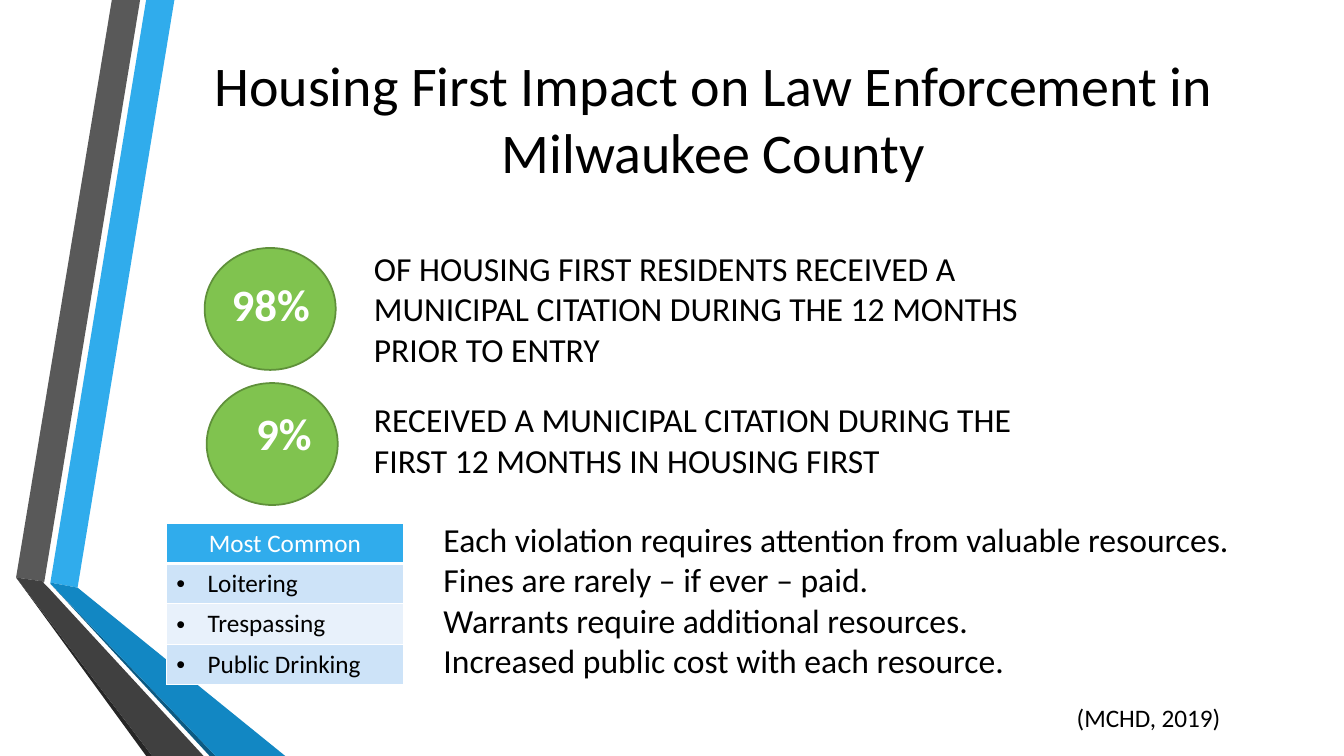
from pptx import Presentation
from pptx.dml.color import RGBColor
from pptx.enum.shapes import MSO_SHAPE as Shape
from pptx.enum.text import MSO_ANCHOR as Anchor, PP_ALIGN as Align
from pptx.oxml.ns import qn
from pptx.util import Inches, Pt
from lxml.etree import SubElement, Element

COLORS = {
    "sky": "30ACEC", "blue": "1287C3", "navy": "0C5A82",
    "gray": "595959", "dark": "404040", "coal": "262626",
    "green": "80C34F", "moss": "5F903A",
    "band": "CDE3F8", "pale": "E8F1FB",
    "white": "FFFFFF", "black": "000000",
}

RIBBONS = [
    ("sky", [(0.5, 5.78), (0.77, 5.83), (1.73, 0), (1.45, 0)]),
    ("gray", [(1.39, 0), (1.11, 0), (0.16, 5.73), (0.44, 5.77)]),
    ("coal", [(0.16, 5.73), (1.45, 7.5), (1.51, 7.5)]),
    ("navy", [(0.5, 5.79), (2.08, 7.5), (2.14, 7.5)]),
    ("blue", [(0.5, 5.79), (2.14, 7.5), (2.83, 7.5), (0.77, 5.83), (0.5, 5.78)]),
    ("dark", [(2.02, 7.5), (0.48, 5.83), (0.43, 5.78), (0.44, 5.77),
              (0.16, 5.73), (1.51, 7.5)]),
]

OFFENSES = ["Loitering", "Trespassing", "Public Drinking"]

COSTS = [
    "Each violation requires attention from valuable resources.",
    "Fines are rarely – if ever – paid.",
    "Warrants require additional resources.",
    "Increased public cost with each resource.",
]


def color(name):
    return RGBColor.from_string(COLORS[name])


def paint(shape, fill, line=None):
    shape.shadow.inherit = False
    shape.fill.solid()
    shape.fill.fore_color.rgb = color(fill)
    if line:
        shape.line.color.rgb = color(line)
        shape.line.width = Pt(1.25)
    else:
        shape.line.fill.background()


def add_ribbon(slide, fill, points):
    start, *rest = [(Inches(x), Inches(y)) for x, y in points]
    outline = slide.shapes.build_freeform(*start)
    outline.add_line_segments(rest, close=True)
    paint(outline.convert_to_shape(), fill)


def write(para, text, size, ink="black", bold=False, align=Align.LEFT):
    para.alignment = align
    run = para.add_run()
    run.text = text
    font = run.font
    font.name, font.size, font.bold = "Calibri", Pt(size), bold
    font.color.rgb = color(ink)


def fill_frame(shape, lines, size, anchor=Anchor.TOP, **style):
    frame = shape.text_frame
    frame.word_wrap = True
    frame.vertical_anchor = anchor
    for i, line in enumerate(lines):
        para = frame.add_paragraph() if i else frame.paragraphs[0]
        write(para, line, size, **style)


def add_text(slide, box, text, size, **style):
    shape = slide.shapes.add_textbox(*map(Inches, box))
    fill_frame(shape, [text], size, **style)


def add_disc(slide, left, top):
    disc = slide.shapes.add_shape(
        Shape.OVAL, Inches(left), Inches(top), Inches(1.3), Inches(1.21))
    paint(disc, "green", "moss")


def add_panel(slide, box, lines):
    """Add a see-through white box of text lines."""
    panel = slide.shapes.add_shape(Shape.RECTANGLE, *map(Inches, box))
    paint(panel, "white")
    tint = panel.fill._xPr.find(qn("a:solidFill"))[0]
    SubElement(tint, qn("a:alpha"), val="46000")
    fill_frame(panel, lines, 24)


def set_cell(cell, fill, under=1):
    cell.fill.solid()
    cell.fill.fore_color.rgb = color(fill)
    cell.vertical_anchor = Anchor.TOP
    props = cell._tc.get_or_add_tcPr()
    for i, side in enumerate("LRTB"):
        width = Pt(under if side == "B" else 1)
        line = Element(qn("a:ln" + side), w=str(width))
        solid = SubElement(line, qn("a:solidFill"))
        SubElement(solid, qn("a:srgbClr"), val=COLORS["white"])
        props.insert(i, line)


def add_bullet(para):
    props = para._p.get_or_add_pPr()
    indent = Inches(0.31)
    props.set("marL", str(indent))
    props.set("indent", str(-indent))
    SubElement(props, qn("a:buFont"), typeface="Arial")
    SubElement(props, qn("a:buChar"), char="•")


def add_list(slide, box, head, items):
    """Add a one-column table with a header and bulleted rows."""
    table = slide.shapes.add_table(
        len(items) + 1, 1, *map(Inches, box)).table
    top = table.cell(0, 0)
    set_cell(top, "sky", under=3)
    write(top.text_frame.paragraphs[0], head, 18, "white", align=Align.CENTER)
    for i, item in enumerate(items, 1):
        cell = table.cell(i, 0)
        set_cell(cell, "band" if i % 2 else "pale")
        para = cell.text_frame.paragraphs[0]
        write(para, item, 18)
        add_bullet(para)


def main():
    deck = Presentation()
    deck.slide_width, deck.slide_height = Inches(13.33), Inches(7.5)
    slide = deck.slides.add_slide(deck.slide_layouts[6])

    for fill, points in RIBBONS:
        add_ribbon(slide, fill, points)

    add_text(slide, (1.01, 0.01, 12.13, 2.31),
             "Housing First Impact on Law Enforcement in Milwaukee County",
             40, anchor=Anchor.MIDDLE, align=Align.CENTER)

    add_disc(slide, 2.03, 2.46)
    add_text(slide, (2.2, 2.7, 1.24, 0.64), "98%", 32, ink="white", bold=True)
    add_text(slide, (3.61, 2.41, 6.94, 1.31),
             "OF HOUSING FIRST RESIDENTS RECEIVED A MUNICIPAL CITATION "
             "DURING THE 12 MONTHS PRIOR TO ENTRY", 24)

    add_disc(slide, 2.05, 3.8)
    add_text(slide, (2.38, 3.98, 0.87, 0.64), "9%", 32,
             ink="white", bold=True, align=Align.CENTER)
    add_text(slide, (3.61, 3.91, 6.81, 0.91),
             "RECEIVED A MUNICIPAL CITATION DURING THE FIRST 12 MONTHS "
             "IN HOUSING FIRST", 24)

    add_list(slide, (1.65, 5.19, 2.35, 1.6), "Most Common", OFFENSES)
    add_panel(slide, (4.3, 5.1, 8.27, 1.74), COSTS)
    add_text(slide, (10.58, 6.92, 1.98, 0.4), "(MCHD, 2019)", 18)

    deck.save("out.pptx")


if __name__ == "__main__":
    main()
